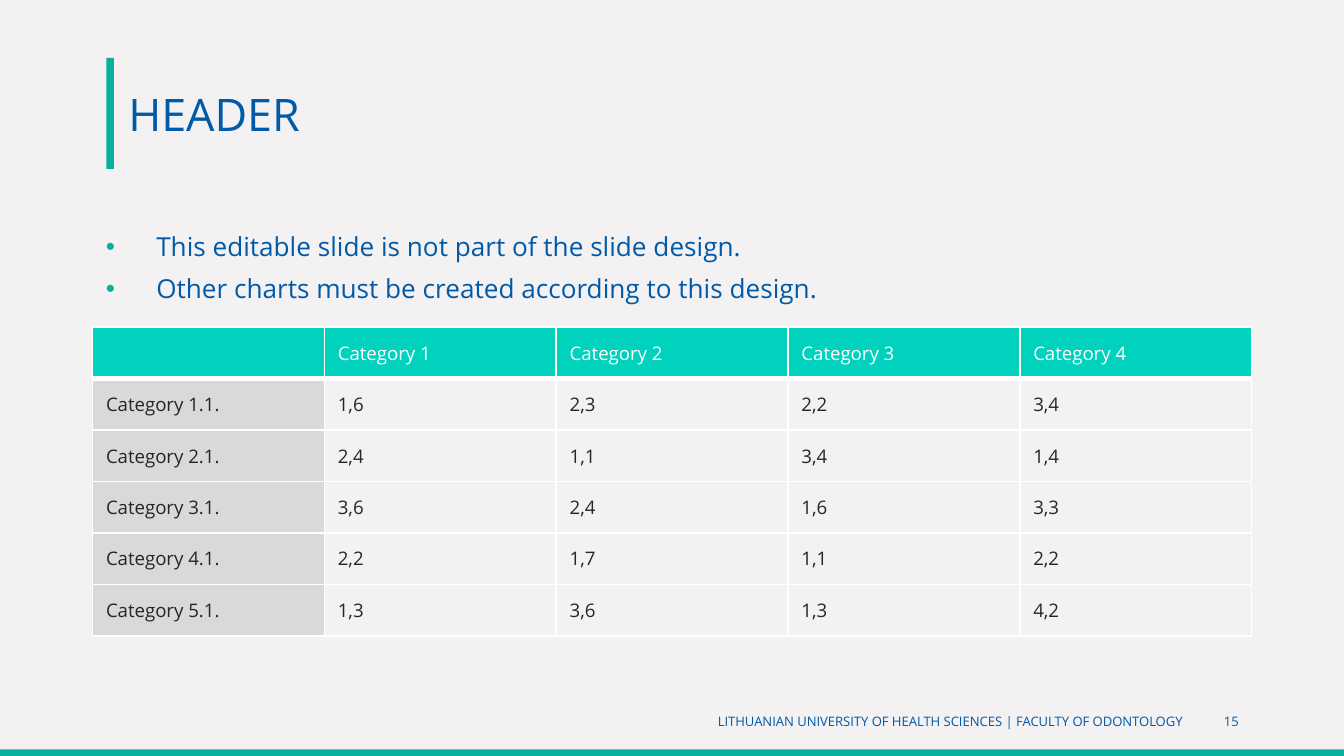
import pptx
import pptx.dml.color
import pptx.enum.shapes
import pptx.enum.text
import pptx.oxml.ns
import pptx.util
from lxml import etree

Pt = pptx.util.Pt
ALIGN = pptx.enum.text.PP_ALIGN
ANCHOR = pptx.enum.text.MSO_ANCHOR
BLUE, TEAL, WHITE = "015AA7", "08B0A0", "FFFFFF"
FOOTER_BLUE = "015AA8"

HEADINGS = ["", "Category 1", "Category 2", "Category 3", "Category 4"]
ROWS = [
    ["Category 1.1.", "1,6", "2,3", "2,2", "3,4"],
    ["Category 2.1.", "2,4", "1,1", "3,4", "1,4"],
    ["Category 3.1.", "3,6", "2,4", "1,6", "3,3"],
    ["Category 4.1.", "2,2", "1,7", "1,1", "2,2"],
    ["Category 5.1.", "1,3", "3,6", "1,3", "4,2"],
]


def rgb(value):
    return pptx.dml.color.RGBColor.from_string(value)


def sub(parent, tag, **attrs):
    return etree.SubElement(parent, pptx.oxml.ns.qn(tag), attrs)


def write(p, text, size=10, color=BLUE, font="Open Sans", align=ALIGN.LEFT):
    p.alignment = align
    r = p.add_run()
    r.text = text
    r.font.size, r.font.name, r.font.bold = Pt(size), font, False
    r.font.color.rgb = rgb(color)


class Deck:
    """Holds the presentation style and the current slide."""

    def __init__(self, width, height):
        self.prs = pptx.Presentation()
        self.prs.slide_width, self.prs.slide_height = Pt(width), Pt(height)
        self.s = self.prs.slides.add_slide(self.prs.slide_layouts[1])

    def place(self, sp, x, y, w, h, anchor):
        sp.left, sp.top, sp.width, sp.height = Pt(x), Pt(y), Pt(w), Pt(h)
        tf = sp.text_frame
        tf.word_wrap, tf.vertical_anchor = True, anchor
        tf.auto_size = pptx.enum.text.MSO_AUTO_SIZE.NONE
        return tf

    def background(self, color):
        fill = self.s.background.fill
        fill.solid()
        fill.fore_color.rgb = rgb(color)

    def bar(self, x, y, w, h, color=TEAL):
        sp = self.s.shapes.add_shape(
            pptx.enum.shapes.MSO_SHAPE.RECTANGLE, Pt(x), Pt(y), Pt(w), Pt(h))
        sp.shadow.inherit = False
        sp.fill.solid()
        sp.fill.fore_color.rgb = rgb(color)
        sp.line.fill.background()

    def title(self, text, *box):
        tf = self.place(self.s.shapes.title, *box, ANCHOR.MIDDLE)
        write(tf.paragraphs[0], text, size=24)

    def bullets(self, items, *box):
        tf = self.place(self.s.placeholders[1], *box, ANCHOR.TOP)
        for i, item in enumerate(items):
            p = tf.add_paragraph() if i else tf.paragraphs[0]
            p.line_spacing = 0.9
            p.space_before = Pt(7.5 if i else 0)
            pPr = p._p.get_or_add_pPr()
            pPr.set("marL", str(Pt(27)))
            pPr.set("indent", str(Pt(-27)))
            sub(sub(pPr, "a:buClr"), "a:srgbClr", val=TEAL)
            sub(pPr, "a:buFont", typeface="Arial")
            sub(pPr, "a:buChar", char="•")
            write(p, item, size=14)

    def footer(self, text, *box):
        sp = self.s.shapes.add_textbox(0, 0, 0, 0)
        tf = self.place(sp, *box, ANCHOR.MIDDLE)
        write(tf.paragraphs[0], text, size=7, color=FOOTER_BLUE, align=ALIGN.RIGHT)

    def cell(self, cell, text, fill, color, borders):
        tcPr = cell._tc.get_or_add_tcPr()
        for side, width in borders.items():
            ln = sub(tcPr, "a:ln" + side, w=str(Pt(width)))
            sub(sub(ln, "a:solidFill"), "a:srgbClr", val=WHITE)
        cell.fill.solid()
        cell.fill.fore_color.rgb = rgb(fill)
        cell.vertical_anchor = ANCHOR.MIDDLE
        cell.margin_top = cell.margin_bottom = 0
        write(cell.text_frame.paragraphs[0], text, color=color)

    def table(self, rows, x, y, col_width, row_height):
        n_rows, n_cols = len(rows), len(rows[0])
        table = self.s.shapes.add_table(
            n_rows, n_cols, Pt(x), Pt(y),
            Pt(col_width * n_cols), Pt(row_height * n_rows)).table
        for col in table.columns:
            col.width = Pt(col_width)
        for i, values in enumerate(rows):
            table.rows[i].height = Pt(row_height)
            # The rule under the heading row is heavier
            borders = {"L": 1, "R": 1, "T": 3 if i == 1 else 1, "B": 1 if i else 3}
            for j, value in enumerate(values):
                fill = "00D2BD" if i == 0 else "F2F2F1" if j else "D9D9D9"
                color = "262626" if i else WHITE
                self.cell(table.cell(i, j), value, fill, color, borders)


def main():
    deck = Deck(720, 405)

    # Background and accent bars
    deck.background("F3F1F2")
    deck.bar(0, 401.4, 720, 3.6)
    deck.bar(57, 31, 4, 59.5)

    # Title and list
    deck.title("HEADER", 61.5, 31, 609, 59.5)
    deck.bullets([
        "This editable slide is not part of the slide design.",
        "Other charts must be created according to this design.",
    ], 49.5, 121.7, 621, 49)

    # Data table
    deck.table([HEADINGS] + ROWS, 49.6, 175.2, 124.2, 27.6)

    # Footer and slide number
    deck.footer("LITHUANIAN UNIVERSITY OF HEALTH SCIENCES | FACULTY OF ODONTOLOGY",
                121, 375.4, 519.6, 21.6)
    deck.footer("15", 645, 375.4, 25.8, 21.6)

    deck.prs.save("out.pptx")


if __name__ == "__main__":
    main()
